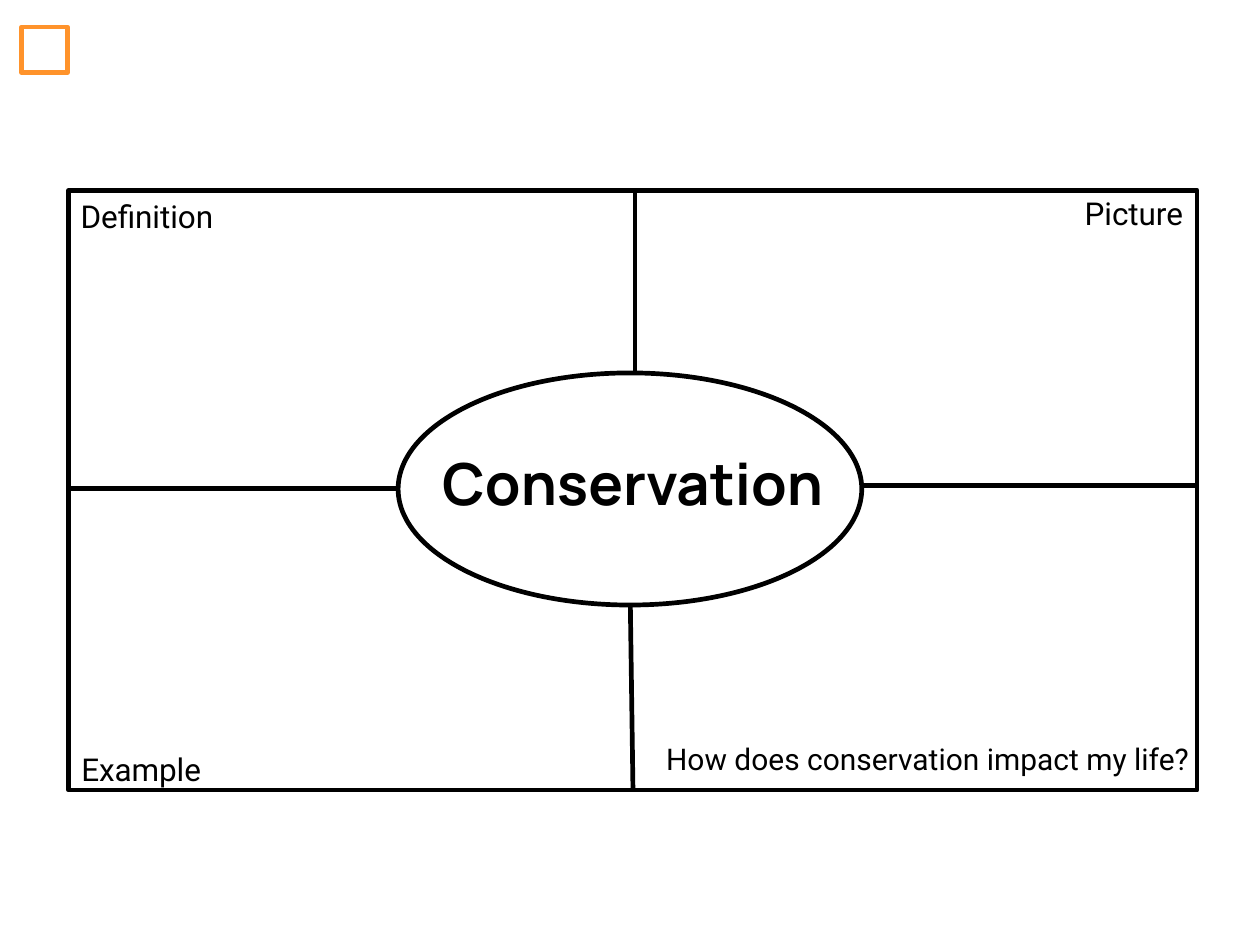
"""Build a four-square vocabulary map for the word Conservation."""
import pptx
import pptx.util
import pptx.dml.color
import pptx.enum.shapes
import pptx.enum.text
import pptx.oxml.ns
from lxml import etree

Cm, Pt = pptx.util.Cm, pptx.util.Pt
SHAPE = pptx.enum.shapes.MSO_SHAPE
ALIGN = pptx.enum.text.PP_ALIGN

BLACK, ORANGE, WHITE = "000000", "FF932B", "FFFFFF"
FRAME = (1.04, 2.88, 17.06, 9.07)
OVAL = (6.02, 5.64, 7.01, 3.51)
BADGE = (0.33, 0.41, 0.69, 0.69)
UP, LOW, FOOT, WEST, EAST = 9.6, 9.53, 9.57, 7.39, 7.34
LABELS = [
    ("Conservation", (6.28, 6.67, 6.58, 1.24), "Manrope", 24.8, True, ALIGN.CENTER),
    ("Definition", (1.04, 2.88, 2.45, 0.76), "Roboto", 13.5, False, ALIGN.LEFT),
    ("Example", (1.05, 11.25, 2.26, 0.76), "Roboto", 13.5, False, ALIGN.LEFT),
    ("Picture", (16.22, 2.84, 1.88, 0.76), "Roboto", 13.5, False, ALIGN.LEFT),
    ("How does conservation impact my life?", (9.75, 11.1, 8.41, 0.74),
     "Roboto", 12.8, False, ALIGN.RIGHT),
]


def rgb(code):
    return pptx.dml.color.RGBColor.from_string(code)


def ink(item, color):
    item.line.color.rgb = rgb(color)
    item.line.width = Pt(2)


def shape(slide, kind, box, color, fill=None):
    item = slide.shapes.add_shape(kind, *map(Cm, box))
    item.shadow.inherit = False
    if fill:
        item.fill.solid()
        item.fill.fore_color.rgb = rgb(fill)
    else:
        item.fill.background()
    ink(item, color)


def spoke(slide, ends):
    line = slide.shapes.add_connector(
        pptx.enum.shapes.MSO_CONNECTOR.STRAIGHT, *map(Cm, ends))
    ink(line, BLACK)
    etree.SubElement(line._element.spPr, pptx.oxml.ns.qn("a:effectLst"))


def draw(slide):
    left, top, wide, high = FRAME
    x, y, w, h = OVAL
    shape(slide, SHAPE.RECTANGLE, FRAME, BLACK)
    for ends in [(UP, top, UP, y), (LOW, y + h, FOOT, top + high),
                 (left, WEST, x, WEST), (x + w, EAST, left + wide, EAST)]:
        spoke(slide, ends)
    shape(slide, SHAPE.OVAL, OVAL, BLACK, WHITE)


def label(slide, text, box, font, size, bold, align):
    frame = slide.shapes.add_textbox(*map(Cm, box)).text_frame
    frame.word_wrap = True
    frame.margin_left = frame.margin_right = Cm(0.18)
    frame.margin_top = frame.margin_bottom = Cm(0.1)
    para = frame.paragraphs[0]
    para.text, para.alignment = text, align
    para.font.name, para.font.size, para.font.bold = font, Pt(size), bold
    para.font.color.rgb = rgb(BLACK)


def main():
    deck = pptx.Presentation()
    deck.slide_width, deck.slide_height = Cm(19.05), Cm(14.29)
    slide = deck.slides.add_slide(deck.slide_layouts[6])
    draw(slide)
    for item in LABELS:
        label(slide, *item)
    shape(slide, SHAPE.RECTANGLE, BADGE, ORANGE)
    deck.save("out.pptx")


if __name__ == "__main__":
    main()
